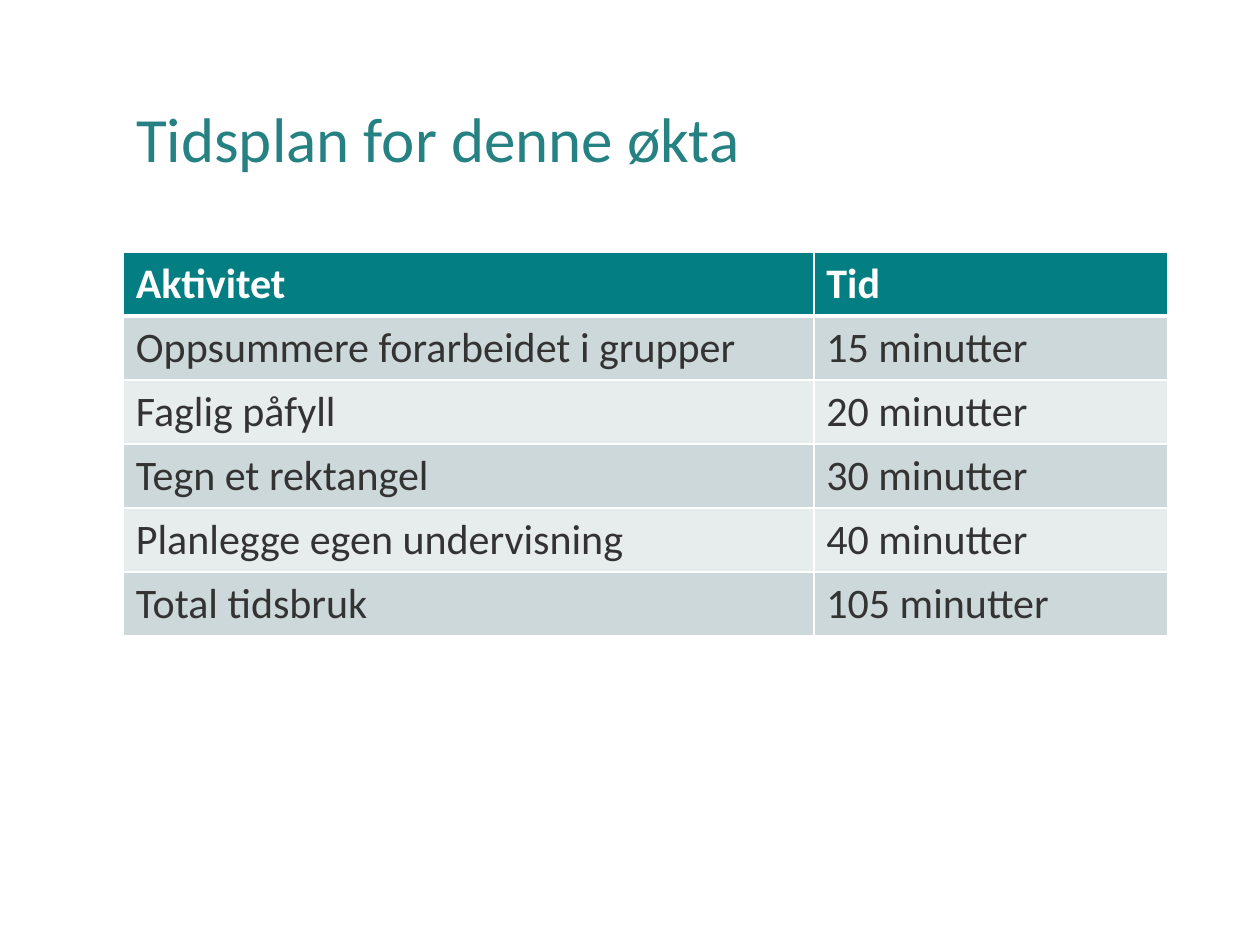
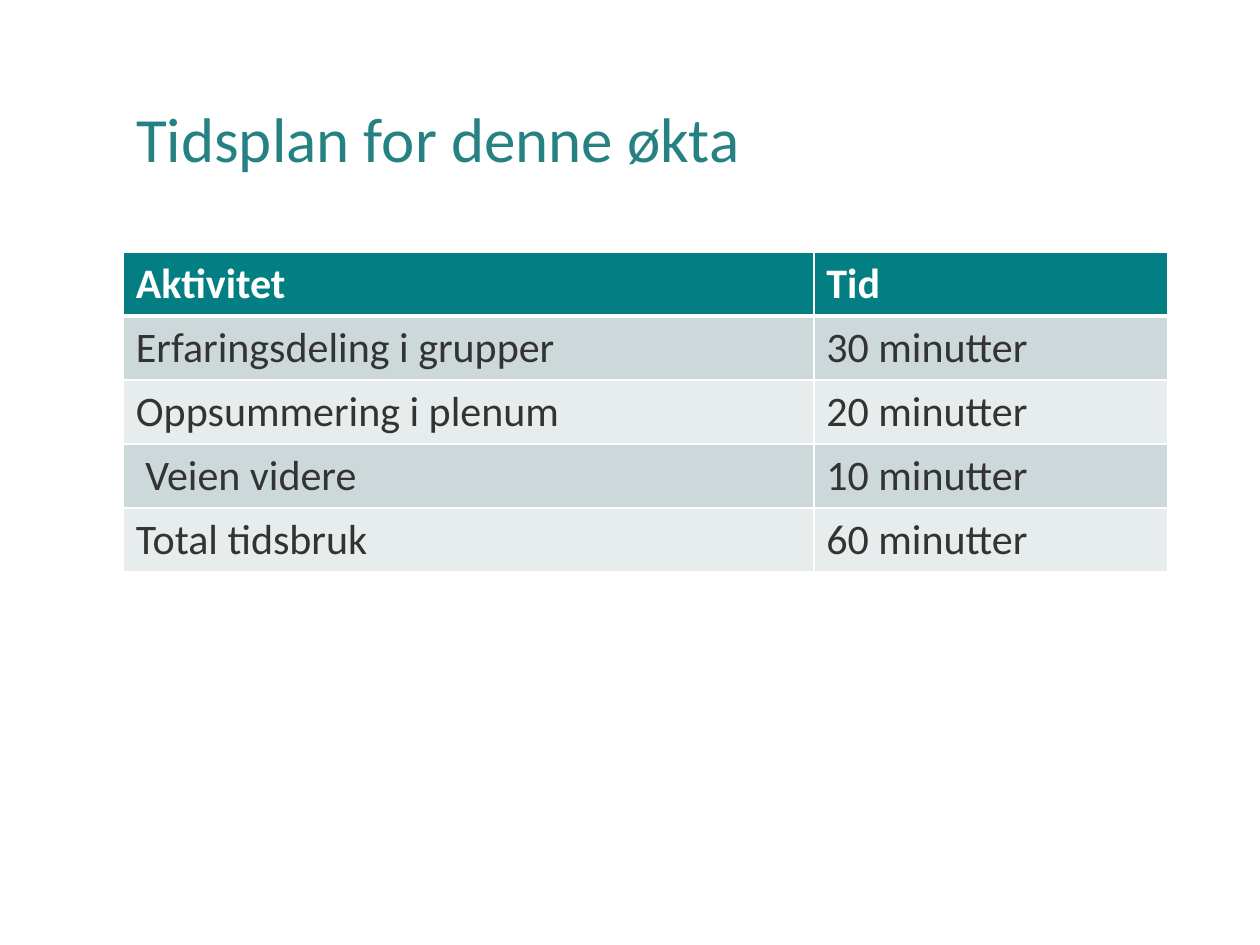
from lxml.etree import SubElement
from pptx import Presentation
from pptx.dml.color import RGBColor
from pptx.enum.text import MSO_ANCHOR, PP_ALIGN
from pptx.oxml.ns import qn
from pptx.util import Cm, Pt

COLORS = {
    "title": "268183",
    "header": "037F83",
    "odd_row": "CCD8D9",
    "even_row": "E7ECED",
    "text": "333333",
    "white": "FFFFFF",
}
FONT = "Calibri"
LEFT, WIDTH = Cm(2.49), Cm(21.06)
COLUMN_WIDTHS = [Cm(13.92), Cm(7.14)]
ROW_HEIGHT = Cm(1.29)
CELL_INSET, EXTRA_INDENT = Cm(0.25), Cm(0.19)

HEADINGS = ("Aktivitet", "Tid")
INDENTED = {"Veien videre"}
SESSIONS = [
    [
        ("Oppsummere forarbeidet i grupper", 15),
        ("Faglig påfyll", 20),
        ("Tegn et rektangel", 30),
        ("Planlegge egen undervisning", 40),
    ],
    [
        ("Erfaringsdeling i grupper", 30),
        ("Oppsummering i plenum", 20),
        ("Veien videre", 10),
    ],
]


def write(frame, text, size=24, color="text", bold=False, line_spacing=None):
    frame.text = text
    paragraph = frame.paragraphs[0]
    paragraph.alignment = PP_ALIGN.LEFT
    paragraph.line_spacing = line_spacing
    font = paragraph.runs[0].font
    font.name, font.size, font.bold = FONT, Pt(size), bold
    font.color.rgb = RGBColor.from_string(COLORS[color])


def add_borders(cell, bottom_width):
    """Draw white cell borders; call before filling the cell."""
    properties = cell._tc.get_or_add_tcPr()
    for side, width in (("L", 1), ("R", 1), ("T", 1), ("B", bottom_width)):
        line = SubElement(properties, qn(f"a:ln{side}"), w=str(Pt(width)))
        fill = SubElement(line, qn("a:solidFill"))
        SubElement(fill, qn("a:srgbClr"), val=COLORS["white"])


deck = Presentation()
deck.slide_width, deck.slide_height = Cm(25.4), Cm(19.05)
title_only = deck.slide_layouts[5]

for activities in SESSIONS:
    slide = deck.slides.add_slide(title_only)

    heading = slide.shapes.title
    heading.left, heading.top, heading.width, heading.height = LEFT, Cm(1.02), WIDTH, Cm(3.68)
    heading.text_frame.vertical_anchor = MSO_ANCHOR.MIDDLE
    write(heading.text_frame, "Tidsplan for denne økta", size=36, color="title", line_spacing=0.9)

    total = sum(minutes for _, minutes in activities)
    timed = activities + [("Total tidsbruk", total)]
    rows = [HEADINGS] + [(activity, f"{minutes} minutter") for activity, minutes in timed]

    schedule = slide.shapes.add_table(
        len(rows), len(HEADINGS), LEFT, Cm(5.08), WIDTH, ROW_HEIGHT * len(rows)
    ).table
    for column, width in zip(schedule.columns, COLUMN_WIDTHS):
        column.width = width

    for row_number, row in enumerate(rows):
        is_header = row_number == 0
        band = "header" if is_header else "odd_row" if row_number % 2 else "even_row"
        for column_number, text in enumerate(row):
            cell = schedule.cell(row_number, column_number)
            # The rule under the header is heavier than the other borders.
            add_borders(cell, bottom_width=3 if is_header else 1)
            cell.fill.solid()
            cell.fill.fore_color.rgb = RGBColor.from_string(COLORS[band])
            cell.margin_left = CELL_INSET + (EXTRA_INDENT if text in INDENTED else 0)
            write(cell.text_frame, text, color="white" if is_header else "text", bold=is_header)

deck.save("out.pptx")
